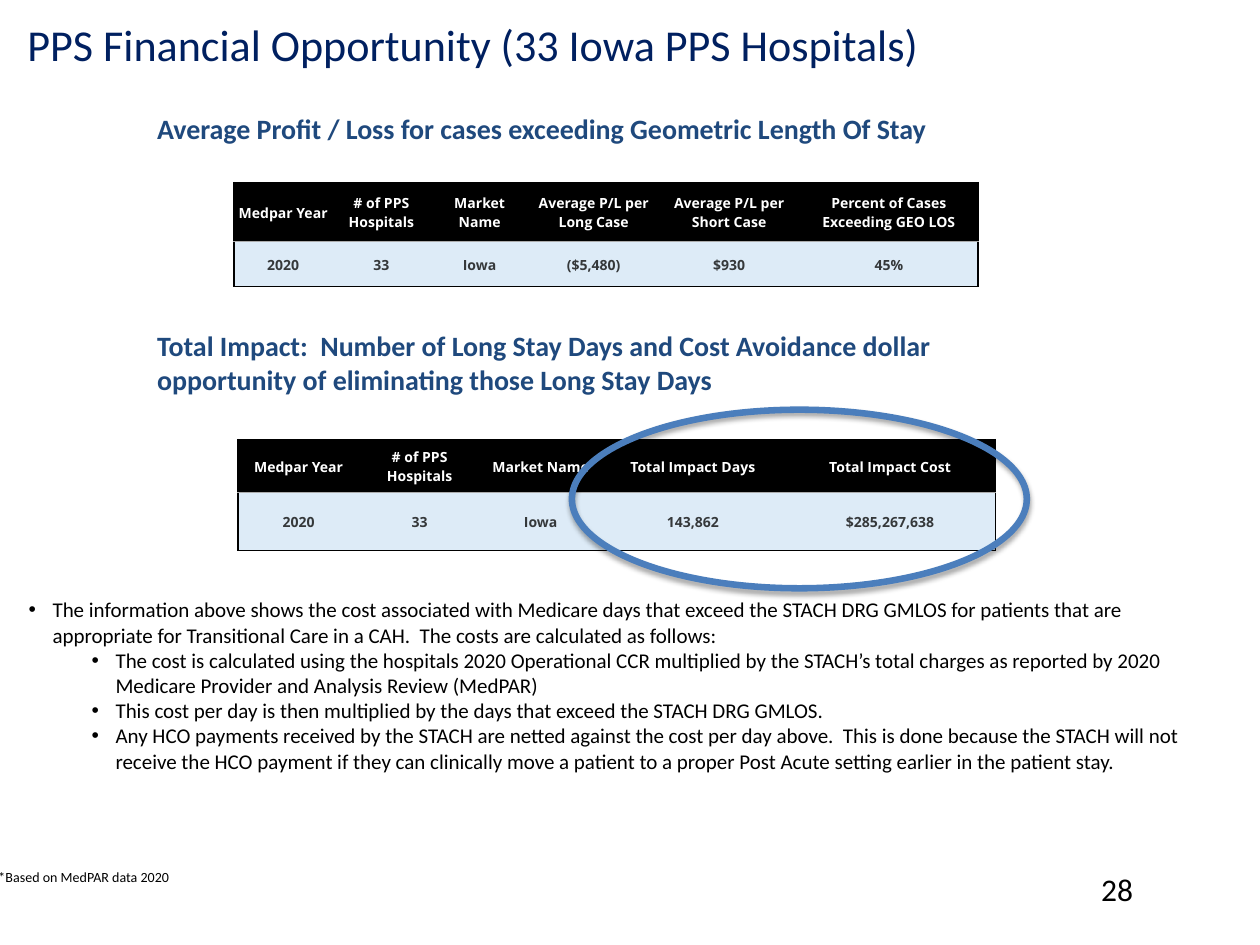
import pptx
import pptx.util
import pptx.dml.color
import pptx.enum.shapes
import pptx.enum.text
import pptx.oxml
import pptx.oxml.ns
from dataclasses import dataclass

Cm, Pt = pptx.util.Cm, pptx.util.Pt
RGB = pptx.dml.color.RGBColor.from_string
ALIGN = pptx.enum.text.PP_ALIGN
ANCHOR = pptx.enum.text.MSO_ANCHOR
NS = pptx.oxml.ns.nsdecls("a")


@dataclass
class Theme:
    body_font: str = "Calibri"
    table_font: str = "Open Sans"
    title: str = "002060"
    heading: str = "1F497D"
    text: str = "000000"
    header_fill: str = "000000"
    header_text: str = "FFFFFF"
    row_fill: str = "DDEBF7"
    row_text: str = "35383A"
    frame: str = "000000"
    rule: str = "ABABAB"
    ring: str = "4B7EBC"
    title_size: float = 25.2
    heading_size: float = 16
    body_size: float = 12
    number_size: float = 18
    small_size: float = 8


theme = Theme()


def add_run(p, text, size, color, font=theme.body_font, bold=False):
    r = p.add_run()
    r.text = text
    r.font.name, r.font.size, r.font.bold = font, Pt(size), bold
    r.font.color.rgb = RGB(color)


def add_text_box(left, top, width, height):
    tf = slide.shapes.add_textbox(Cm(left), Cm(top), Cm(width), Cm(height)).text_frame
    tf.word_wrap = True
    return tf


prs = pptx.Presentation()
prs.slide_width, prs.slide_height = Cm(25.4), Cm(19.05)
slide = prs.slides.add_slide(prs.slide_layouts[5])

# Title
sp = slide.shapes.title
sp.left, sp.top, sp.width, sp.height = Cm(0.3), Cm(0.23), Cm(20.4), Cm(3.18)
tf = sp.text_frame
tf.auto_size = pptx.enum.text.MSO_AUTO_SIZE.NONE
tf.vertical_anchor = ANCHOR.TOP
p = tf.paragraphs[0]
p.alignment = ALIGN.LEFT
add_run(p, "PPS Financial Opportunity (33 Iowa PPS Hospitals)", theme.title_size, theme.title)

# Section headings
headings = [
    ("Average Profit / Loss for cases exceeding Geometric Length Of Stay", 2.13, 24.23, 0.94),
    ("Total Impact:  Number of Long Stay Days and Cost Avoidance dollar "
     "opportunity of eliminating those Long Stay Days", 6.5, 17.78, 1.63),
]
for text, top, width, height in headings:
    tf = add_text_box(2.92, top, width, height)
    add_run(tf.paragraphs[0], text, theme.heading_size, theme.heading, bold=True)

# Tables: left, top, column widths, row heights, rows of text
tables = [
    (4.72, 3.68, [1.98, 1.98, 1.98, 2.62, 2.84, 3.6], [1.19, 0.91], [
        ["Medpar Year", "# of PPS Hospitals", "Market Name", "Average P/L per Long Case",
         "Average P/L per Short Case", "Percent of Cases Exceeding GEO LOS"],
        ["2020", "33", "Iowa", "($5,480)", "$930", "45%"]]),
    (4.8, 8.86, [2.44, 2.44, 2.44, 3.7, 4.25], [1.07, 1.17], [
        ["Medpar Year", "# of PPS Hospitals", "Market Name", "Total Impact Days",
         "Total Impact Cost"],
        ["2020", "33", "Iowa", "143,862", "$285,267,638"]]),
]
for left, top, widths, heights, rows in tables:
    table = slide.shapes.add_table(len(rows), len(widths), Cm(left), Cm(top),
                                   Cm(sum(widths)), Cm(sum(heights))).table
    table.horz_banding = False
    # Plain style without grid lines
    style = table._tbl.tblPr.find(pptx.oxml.ns.qn("a:tableStyleId"))
    style.text = "{2D5ABB26-0587-4C30-8999-92F81FD0307C}"
    for col, width in zip(table.columns, widths):
        col.width = Cm(width)
    for i, (height, texts) in enumerate(zip(heights, rows)):
        table.rows[i].height = Cm(height)
        for j, text in enumerate(texts):
            cell = table.cell(i, j)
            cell.margin_left = cell.margin_right = cell.margin_top = Cm(0.03)
            cell.margin_bottom = 0
            cell.vertical_anchor = ANCHOR.MIDDLE
            # Black frame outside, thin grey rule under the header
            frame, rule = (theme.frame, 1), (theme.rule, 0.5)
            borders = {"L": frame if j == 0 else None,
                       "R": frame if j == len(texts) - 1 else None,
                       "T": frame if i == 0 else rule,
                       "B": rule if i == 0 else frame}
            for side, border in borders.items():
                if border:
                    cell._tc.get_or_add_tcPr().append(pptx.oxml.parse_xml(
                        f'<a:ln{side} {NS} w="{Pt(border[1])}"><a:solidFill>'
                        f'<a:srgbClr val="{border[0]}"/></a:solidFill></a:ln{side}>'))
            cell.fill.solid()
            cell.fill.fore_color.rgb = RGB(theme.header_fill if i == 0 else theme.row_fill)
            p = cell.text_frame.paragraphs[0]
            p.alignment = ALIGN.CENTER
            add_run(p, text, theme.small_size,
                    theme.header_text if i == 0 else theme.row_text, theme.table_font, True)

# Ring around the total impact columns
sp = slide.shapes.add_shape(pptx.enum.shapes.MSO_SHAPE.OVAL,
                            Cm(11.53), Cm(8.26), Cm(9.17), Cm(3.6))
sp.fill.background()
sp.line.color.rgb = RGB(theme.ring)
sp.line.width = Pt(3.75)
sp._element.spPr.append(pptx.oxml.parse_xml(
    f'<a:effectLst {NS}><a:outerShdw blurRad="{Pt(3.1)}" dist="{Pt(1.8)}" dir="5400000" '
    'rotWithShape="0"><a:srgbClr val="000000"><a:alpha val="35000"/></a:srgbClr>'
    '</a:outerShdw></a:effectLst>'))

# Explanation bullets
bullets = [
    (0, "The information above shows the cost associated with Medicare days that exceed the "
        "STACH DRG GMLOS for patients that are appropriate for Transitional Care in a CAH.  "
        "The costs are calculated as follows:"),
    (1, "The cost is calculated using the hospitals 2020 Operational CCR multiplied by the "
        "STACH’s total charges as reported by 2020 Medicare Provider and Analysis Review "
        "(MedPAR)"),
    (1, "This cost per day is then multiplied by the days that exceed the STACH DRG GMLOS."),
    (1, "Any HCO payments received by the STACH are netted against the cost per day above.  "
        "This is done because the STACH will not receive the HCO payment if they can "
        "clinically move a patient to a proper Post Acute setting earlier in the patient stay."),
]
tf = add_text_box(0.33, 11.91, 24.23, 4.37)
for i, (level, text) in enumerate(bullets):
    p = tf.add_paragraph() if i else tf.paragraphs[0]
    p.level = level
    pPr = p._p.get_or_add_pPr()
    pPr.set("marL", str(Cm(0.48 + 1.27 * level)))
    pPr.set("indent", str(-Cm(0.48)))
    pPr.append(pptx.oxml.parse_xml(f'<a:buFont {NS} typeface="Arial"/>'))
    pPr.append(pptx.oxml.parse_xml(f'<a:buChar {NS} char="•"/>'))
    add_run(p, text, theme.body_size, theme.text)

# Slide number
tf = add_text_box(21.95, 17.42, 2.74, 1.02)
add_run(tf.paragraphs[0], "28", theme.number_size, theme.text)

# Source note
tf = add_text_box(-0.41, 17.25, 6.68, 1.75)
tf.margin_left, tf.margin_top = Cm(0.38), Cm(0.23)
p = tf.paragraphs[0]
p.alignment = ALIGN.JUSTIFY
p.line_spacing, p.space_after = 1.07, Pt(8)
add_run(p, "*Based on MedPAR data 2020", theme.small_size, theme.text)

prs.save("out.pptx")
